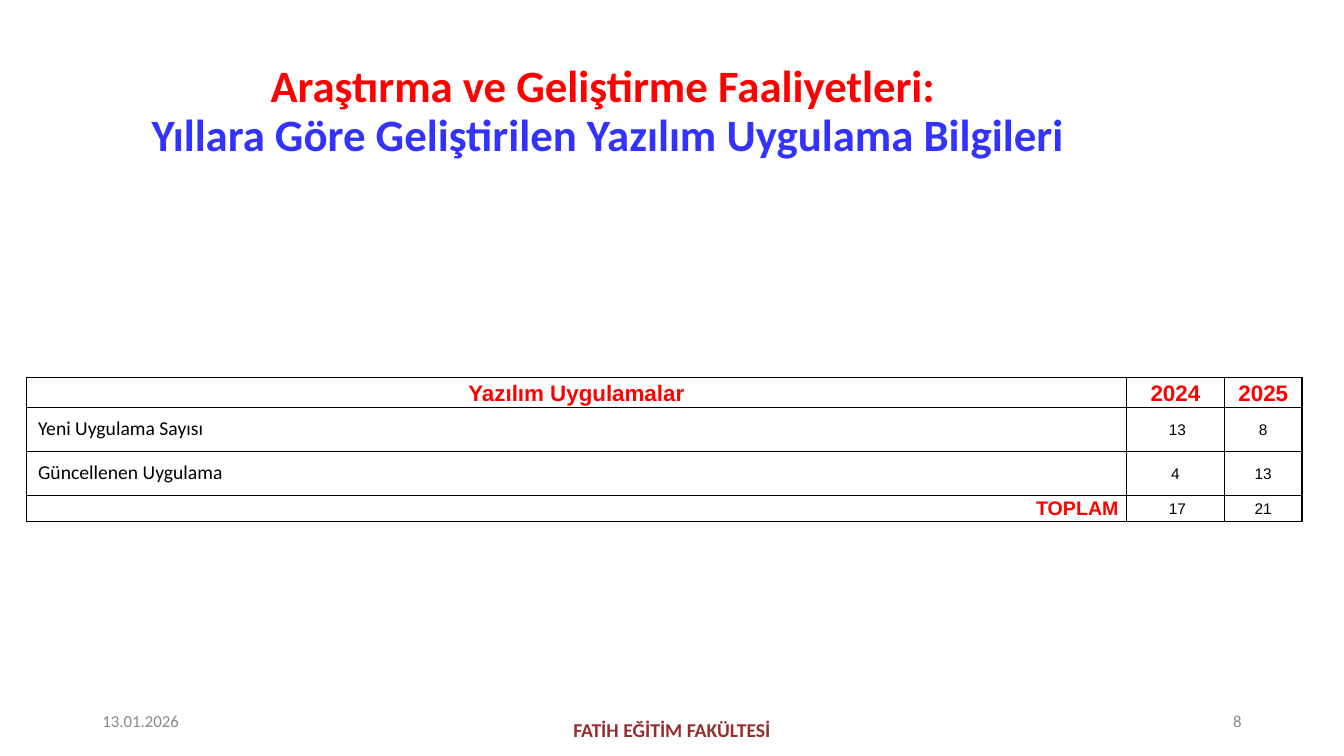
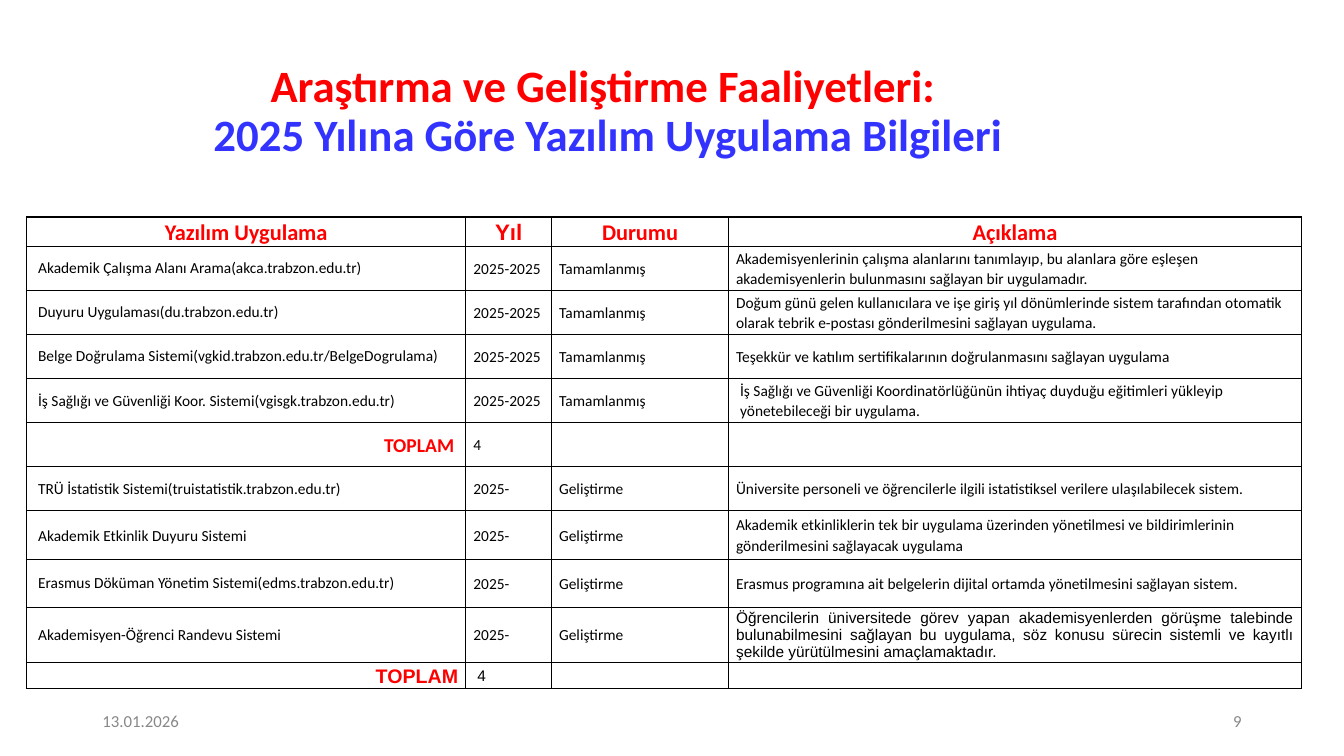
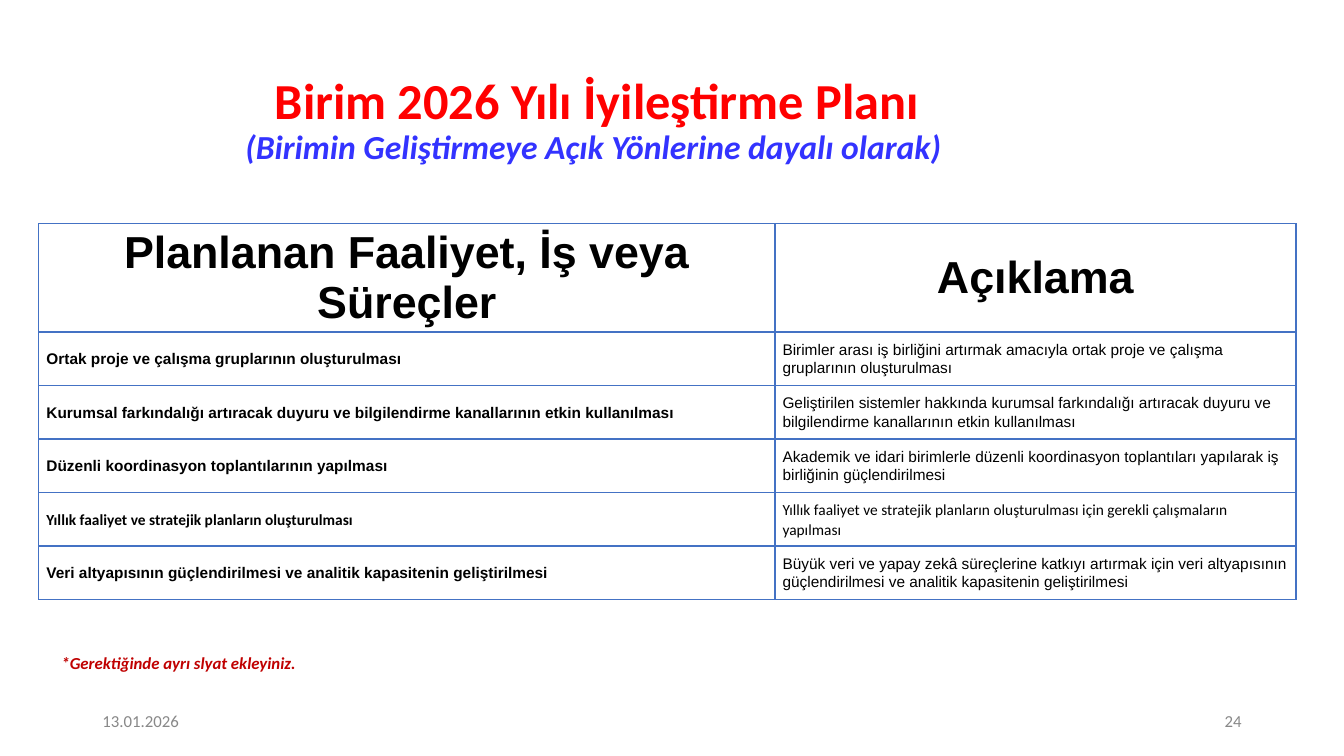
from lxml.etree import SubElement
from pptx import Presentation
from pptx.dml.color import RGBColor
from pptx.enum.text import MSO_ANCHOR, MSO_AUTO_SIZE, PP_ALIGN
from pptx.oxml.ns import qn
from pptx.util import Cm, Pt

RED = RGBColor(0xFF, 0x00, 0x00)
BLUE = RGBColor(0x33, 0x33, 0xFF)
BLACK = RGBColor(0x00, 0x00, 0x00)
GRAY = RGBColor(0x88, 0x88, 0x88)
MAROON = RGBColor(0x96, 0x2E, 0x2E)
CRIMSON = RGBColor(0xC0, 0x00, 0x00)
STEEL = RGBColor(0x44, 0x72, 0xC4)
SANS, ARIAL = "Calibri", "Arial"
OTHER = {SANS: ARIAL, ARIAL: SANS}
LEFT, MID, RIGHT, FULL = PP_ALIGN.LEFT, PP_ALIGN.CENTER, PP_ALIGN.RIGHT, PP_ALIGN.JUSTIFY
TOP = "Araştırma ve Geliştirme Faaliyetleri: "
DONE, WORK = ("2025-2025", "Tamamlanmış"), ("2025-", "Geliştirme")


def style(font, size, color, face=SANS, bold=False, slant=False):
    font.size = Pt(size)
    font.color.rgb = color
    font.name = face
    font.bold = bold
    font.italic = slant


def label(slide, text, box, align, size, color, bold=False, slant=False, anchor=MSO_ANCHOR.MIDDLE):
    frame = slide.shapes.add_textbox(*map(Cm, box)).text_frame
    frame.word_wrap = True
    frame.vertical_anchor = anchor
    par = frame.paragraphs[0]
    par.text = text
    par.alignment = align
    style(par.font, size, color, SANS, bold, slant)


PAGES = [
    {
        "number": "8",
        "title": [(TOP, 32, False), ("Yıllara Göre Geliştirilen Yazılım Uygulama Bilgileri", 32, False)],
        "place": (0.66, 1.75, 29.34, 2.16),
        "at": (0.67, 9.52),
        "cols": [27.71, 2.48, 1.95],
        "heights": [0.74, 1.11, 1.11, 0.66],
        "face": ARIAL,
        "odd": {(1, 0), (2, 0)},
        "inset": {(1, 0), (2, 0), (1, 1), (3, 1)},
        "tight": {(1, 0), (2, 0)},
        "head": (16, RED),
        "first": (14, False),
        "align": MID,
        "line": BLACK,
        "rule": 1,
        "rows": [
            ("Yazılım Uygulamalar", "2024", "2025"),
            ("Yeni Uygulama Sayısı", "13", "8"),
            ("Güncellenen Uygulama", "4", "13"),
            ("TOPLAM", "17", "21"),
        ],
    },
    {
        "number": "9",
        "title": [(TOP, 32, False), ("2025 Yılına Göre Yazılım Uygulama Bilgileri", 32, False)],
        "place": (0.66, 1.75, 29.34, 2.16),
        "at": (0.67, 5.47),
        "cols": [11.07, 2.16, 4.46, 14.44],
        "heights": [0.74] + [1.11] * 6 + [1.23, 1.2, 1.39, 0.66],
        "face": SANS,
        "odd": {(0, 1), (9, 3), (10, 0), (10, 1)},
        "inset": {(row, 0) for row in range(1, 10)} | {(4, 3), (10, 1)},
        "tight": {(1, 0), (2, 0), (3, 0), (8, 0), (9, 0), (9, 3)},
        "head": (16, RED),
        "first": (11, False),
        "align": LEFT,
        "line": BLACK,
        "rule": 1,
        "rows": [
            ("Yazılım Uygulama", "Yıl", "Durumu", "Açıklama"),
            ("Akademik Çalışma Alanı Arama(akca.trabzon.edu.tr)", *DONE,
             "Akademisyenlerinin çalışma alanlarını tanımlayıp, bu alanlara göre eşleşen "
             "akademisyenlerin bulunmasını sağlayan bir uygulamadır."),
            ("Duyuru Uygulaması(du.trabzon.edu.tr)", *DONE,
             "Doğum günü gelen kullanıcılara ve işe giriş yıl dönümlerinde sistem tarafından "
             "otomatik olarak tebrik e-postası gönderilmesini sağlayan uygulama."),
            ("Belge Doğrulama Sistemi(vgkid.trabzon.edu.tr/BelgeDogrulama)", *DONE,
             "Teşekkür ve katılım sertifikalarının doğrulanmasını sağlayan uygulama"),
            ("İş Sağlığı ve Güvenliği Koor. Sistemi(vgisgk.trabzon.edu.tr)", *DONE,
             "İş Sağlığı ve Güvenliği Koordinatörlüğünün ihtiyaç duyduğu eğitimleri yükleyip "
             "yönetebileceği bir uygulama."),
            ("TOPLAM", "4", "", ""),
            ("TRÜ İstatistik Sistemi(truistatistik.trabzon.edu.tr)", *WORK,
             "Üniversite personeli ve öğrencilerle ilgili istatistiksel verilere ulaşılabilecek sistem."),
            ("Akademik Etkinlik Duyuru Sistemi", *WORK,
             "Akademik etkinliklerin tek bir uygulama üzerinden yönetilmesi ve bildirimlerinin "
             "gönderilmesini sağlayacak uygulama"),
            ("Erasmus Döküman Yönetim Sistemi(edms.trabzon.edu.tr)", *WORK,
             "Erasmus programına ait belgelerin dijital ortamda yönetilmesini sağlayan sistem."),
            ("Akademisyen-Öğrenci Randevu Sistemi", *WORK,
             "Öğrencilerin üniversitede görev yapan akademisyenlerden görüşme talebinde "
             "bulunabilmesini sağlayan bu uygulama, söz konusu sürecin sistemli ve kayıtlı "
             "şekilde yürütülmesini amaçlamaktadır."),
            ("TOPLAM", "4", "", ""),
        ],
    },
    {
        "number": "24",
        "title": [("Birim 2026 Yılı İyileştirme Planı", 36, False),
                  ("(Birimin Geliştirmeye Açık Yönlerine dayalı olarak) ", 24, True)],
        "place": (0.76, 1.99, 28.58, 2.13),
        "at": (0.98, 5.64),
        "cols": [18.55, 13.13],
        "heights": [2.72] + [1.35] * 5,
        "face": ARIAL,
        "odd": {(4, 0), (4, 1)},
        "inset": set(),
        "tight": {(0, 0), (0, 1)},
        "head": (32, BLACK),
        "first": (11, True),
        "align": LEFT,
        "line": STEEL,
        "rule": 2,
        "rows": [
            ("Planlanan Faaliyet, İş veya Süreçler", "Açıklama"),
            ("Ortak proje ve çalışma gruplarının oluşturulması",
             "Birimler arası iş birliğini artırmak amacıyla ortak proje ve çalışma gruplarının oluşturulması"),
            ("Kurumsal farkındalığı artıracak duyuru ve bilgilendirme kanallarının etkin kullanılması",
             "Geliştirilen sistemler hakkında kurumsal farkındalığı artıracak duyuru ve "
             "bilgilendirme kanallarının etkin kullanılması"),
            ("Düzenli koordinasyon toplantılarının yapılması",
             "Akademik ve idari birimlerle düzenli koordinasyon toplantıları yapılarak iş "
             "birliğinin güçlendirilmesi"),
            ("Yıllık faaliyet ve stratejik planların oluşturulması",
             "Yıllık faaliyet ve stratejik planların oluşturulması için gerekli çalışmaların yapılması"),
            ("Veri altyapısının güçlendirilmesi ve analitik kapasitenin geliştirilmesi",
             "Büyük veri ve yapay zekâ süreçlerine katkıyı artırmak için veri altyapısının "
             "güçlendirilmesi ve analitik kapasitenin geliştirilmesi"),
        ],
    },
]

deck = Presentation()
deck.slide_width, deck.slide_height = Cm(33.87), Cm(19.05)
slides = []

for page in PAGES:
    slide = deck.slides.add_slide(deck.slide_layouts[5])
    slides.append(slide)
    title = slide.shapes.title
    title.left, title.top, title.width, title.height = map(Cm, page["place"])
    frame = title.text_frame
    frame.auto_size = MSO_AUTO_SIZE.NONE
    frame.vertical_anchor = MSO_ANCHOR.MIDDLE
    par = frame.paragraphs[0]
    par.alignment = MID
    par.line_spacing = 0.9
    for index, (text, size, slant) in enumerate(page["title"]):
        if index:
            par.add_line_break()
        run = par.add_run()
        run.text = text
        style(run.font, size, (RED, BLUE)[index], SANS, True, slant)

    label(slide, "13.01.2026", (2.33, 17.66, 7.62, 1.01), LEFT, 12, GRAY)
    label(slide, page["number"], (23.92, 17.66, 7.62, 1.01), RIGHT, 12, GRAY)

    rows, cols, heights = page["rows"], page["cols"], page["heights"]
    box = (*page["at"], sum(cols), sum(heights))
    table = slide.shapes.add_table(len(rows), len(cols), *map(Cm, box)).table
    table.first_row = table.horz_banding = False
    for col, width in zip(table.columns, cols):
        col.width = Cm(width)
    for row, height in zip(table.rows, heights):
        row.height = Cm(height)

    for r, row in enumerate(rows):
        for c, text in enumerate(row):
            cell = table.cell(r, c)
            cell.margin_left = cell.margin_right = Cm(0.19)
            cell.margin_top = cell.margin_bottom = 0
            cell.vertical_anchor = MSO_ANCHOR.MIDDLE
            props = cell._tc.get_or_add_tcPr()
            for side in ("lnL", "lnR", "lnT", "lnB"):
                thick = page["rule"] if (r, side) in ((0, "lnB"), (1, "lnT")) else 1
                edge = SubElement(props, qn("a:" + side), w=str(Pt(thick)))
                fill = SubElement(edge, qn("a:solidFill"))
                SubElement(fill, qn("a:srgbClr"), val=str(page["line"]))
            cell.fill.background()

            size, color, bold, align = 11, BLACK, False, page["align"]
            if r == 0:
                (size, color), bold, align = page["head"], True, MID
            elif text == "TOPLAM":
                size, color, bold, align = 14, RED, True, RIGHT
            elif c == 0:
                (size, bold), align = page["first"], LEFT
            elif c == 3 and (r, c) in page["odd"]:
                align = FULL
            face = page["face"]
            if (r, c) in page["odd"]:
                face = OTHER[face]
            par = cell.text_frame.paragraphs[0]
            par.alignment = align
            par.line_spacing = 1.0 if (r, c) in page["tight"] else 1.07
            if (r, c) in page["inset"]:
                side = "marR" if align == RIGHT else "marL"
                par._p.get_or_add_pPr().set(side, str(Cm(0.1)))
            style(par.font, size, color, face, bold)
            if text:
                par.add_run().text = text
            else:
                SubElement(par._p, qn("a:endParaRPr"), sz="1100")

label(slides[0], "FATİH EĞİTİM FAKÜLTESİ", (11.22, 17.88, 11.43, 1.02), MID, 14, MAROON, True)
label(slides[2], "*Gerektiğinde ayrı slyat ekleyiniz.", (1.3, 16.33, 12.7, 0.77), LEFT, 12,
      CRIMSON, True, True, MSO_ANCHOR.TOP)

deck.save("out.pptx")
